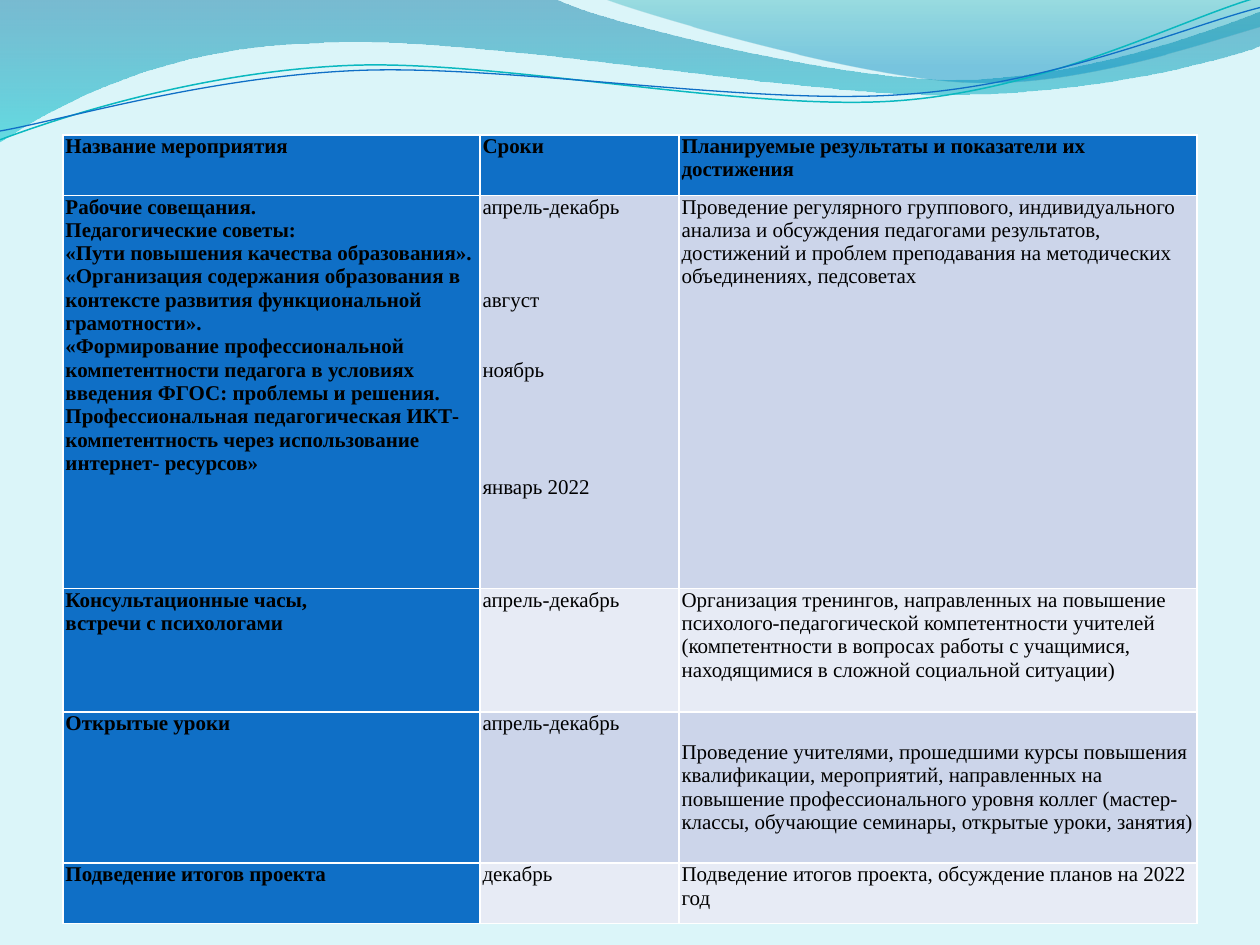
from dataclasses import dataclass

from lxml.etree import SubElement
from pptx import Presentation
from pptx.dml.color import RGBColor
from pptx.enum.text import MSO_ANCHOR, PP_ALIGN
from pptx.oxml.ns import qn
from pptx.util import Inches, Pt


@dataclass(frozen=True)
class Theme:
    font: str = "Times New Roman"
    text_size: float = 12
    blank_line: float = 13.35
    background: str = "DBF5F9"
    text: str = "000000"
    accent: str = "0F6FC6"
    teal: str = "0AB8BF"
    band_dark: str = "CCD5EA"
    band_light: str = "E7EBF5"
    wide_wave: tuple = ((0, "0074A1", 45), (1, "00C6CF", 55))
    right_wave: tuple = ((0, "00A1A9", 30), (0.8, "008BBF", 45))


THEME = Theme()

WIDE_WAVE = [
    (0, 0), (4.4, -0.01),
    (4.76, 0.17, 6.64, 0.63, 7.58, 0.63), (8.53, 0.63, 9.58, 0.26, 10, 0.09),
    (10.01, 0.36),
    (9.83, 0.44, 8.7, 0.76, 7.46, 0.75), (6.22, 0.75, 3.82, 0.28, 2.57, 0.34),
    (1.29, 0.36, 0.46, 0.83, -0.01, 1.13),
]
RIGHT_WAVE = [
    (4.79, -0.01), (5.09, 0.11, 6.82, 0.62, 7.69, 0.65),
    (8.56, 0.69, 9.61, 0.32, 10, 0.21), (10, 0),
]
TEAL_LINE = [
    (0, 1.11), (0.48, 0.93, 1.58, 0.57, 2.77, 0.52),
    (3.95, 0.47, 5.93, 0.89, 7.13, 0.8), (8.33, 0.71, 9.38, 0.15, 9.98, -0.02),
]
BLUE_LINE = [
    (0, 1.04), (0.47, 0.96, 1.64, 0.61, 2.83, 0.56),
    (4.03, 0.51, 5.97, 0.84, 7.17, 0.75), (8.36, 0.67, 9.41, 0.21, 10, 0.06),
]

COLUMN_WIDTHS = [3.31, 1.58, 4.11]
ROW_HEIGHTS = [0.48, 3.12, 0.98, 1.2, 0.48]
ROWS = [
    [
        ["Название мероприятия"],
        ["Сроки"],
        ["Планируемые результаты и показатели их достижения"],
    ],
    [
        [
            "Рабочие совещания.",
            "Педагогические советы:",
            "«Пути повышения качества образования».",
            "«Организация содержания образования в контексте развития "
            "функциональной грамотности».",
            "«Формирование профессиональной компетентности педагога в условиях "
            "введения ФГОС: проблемы и решения. Профессиональная педагогическая "
            "ИКТ- компетентность через использование интернет- ресурсов»",
        ],
        ["апрель-декабрь", "август", "ноябрь", "январь 2022"],
        [
            "Проведение регулярного группового, индивидуального анализа и "
            "обсуждения педагогами результатов, достижений и проблем "
            "преподавания на методических объединениях, педсоветах"
        ],
    ],
    [
        ["Консультационные часы,", "встречи с психологами"],
        ["апрель-декабрь"],
        [
            "Организация тренингов, направленных на повышение "
            "психолого-педагогической компетентности учителей (компетентности "
            "в вопросах работы с учащимися, находящимися в сложной социальной "
            "ситуации)"
        ],
    ],
    [
        ["Открытые уроки"],
        ["апрель-декабрь"],
        [
            "Проведение учителями, прошедшими курсы повышения квалификации, "
            "мероприятий, направленных на повышение профессионального уровня "
            "коллег (мастер-классы, обучающие семинары, открытые уроки, занятия)"
        ],
    ],
    [
        ["Подведение итогов проекта"],
        ["декабрь"],
        ["Подведение итогов проекта, обсуждение планов на 2022 год"],
    ],
]
MONTH_GAPS = [0, 3, 2, 4]


def color(value):
    return RGBColor.from_string(value)


def bend_segments(shape, outline, points):
    origin_x = min(x for x, _ in points)
    origin_y = min(y for _, y in points)
    lines = list(shape.element.spPr.iter(qn("a:lnTo")))
    for line, segment in zip(lines, outline[1:]):
        if len(segment) == 2:
            continue
        line.tag = qn("a:cubicBezTo")
        line.remove(line[0])
        for x, y in zip(segment[::2], segment[1::2]):
            SubElement(line, qn("a:pt"), x=str(Inches(x) - origin_x), y=str(Inches(y) - origin_y))


def add_outline(slide, left, top, outline, close):
    points = [(Inches(segment[-2]), Inches(segment[-1])) for segment in outline]
    builder = slide.shapes.build_freeform(*points[0])
    builder.add_line_segments(points[1:], close=close)
    shape = builder.convert_to_shape(left, top)
    bend_segments(shape, outline, points)
    shape.shadow.inherit = False
    return shape


def add_wave(slide, left, top, outline, stops):
    shape = add_outline(slide, left, top, outline, True)
    shape.line.fill.background()
    shape.fill.gradient()
    shape.fill.gradient_angle = 270
    for stop, (position, value, _) in zip(shape.fill.gradient_stops, stops):
        stop.position = position
        stop.color.rgb = color(value)
    for element, (_, _, opacity) in zip(shape.element.spPr.iter(qn("a:srgbClr")), stops):
        SubElement(element, qn("a:alpha"), val=str(opacity * 1000))


def add_wave_line(slide, left, top, outline, value, width):
    shape = add_outline(slide, left, top, outline, False)
    shape.fill.background()
    shape.line.color.rgb = color(value)
    shape.line.width = Pt(width)


def add_wave_header(slide, left, top):
    add_wave(slide, left, top, WIDE_WAVE, THEME.wide_wave)
    add_wave(slide, left, top, RIGHT_WAVE, THEME.right_wave)
    add_wave_line(slide, left, top, TEAL_LINE, THEME.teal, 0.85)
    add_wave_line(slide, left, top, BLUE_LINE, THEME.accent, 0.75)


def fill_cell(cell, texts, row_index, column_index):
    is_heading = row_index == 0 or column_index == 0
    band = THEME.band_dark if row_index % 2 else THEME.band_light
    cell.fill.solid()
    cell.fill.fore_color.rgb = color(THEME.accent if is_heading else band)
    cell.margin_left = cell.margin_right = Inches(0.02)
    cell.margin_top = cell.margin_bottom = 0
    if (row_index, column_index) == (3, 2):
        cell.vertical_anchor = MSO_ANCHOR.MIDDLE
    gaps = MONTH_GAPS if column_index == 1 else [0] * len(texts)
    for index, (text, gap) in enumerate(zip(texts, gaps)):
        paragraph = cell.text_frame.paragraphs[0] if index == 0 else cell.text_frame.add_paragraph()
        paragraph.text = text
        paragraph.alignment = PP_ALIGN.LEFT
        if gap:
            paragraph.space_before = Pt(gap * THEME.blank_line)
        paragraph.font.name = THEME.font
        paragraph.font.size = Pt(THEME.text_size)
        paragraph.font.bold = is_heading
        paragraph.font.color.rgb = color(THEME.text)


def add_plan_table(slide, left, top, width, height):
    table = slide.shapes.add_table(len(ROWS), len(COLUMN_WIDTHS), left, top, width, height).table
    for column, share in zip(table.columns, COLUMN_WIDTHS):
        column.width = int(width * share / sum(COLUMN_WIDTHS))
    for row, share in zip(table.rows, ROW_HEIGHTS):
        row.height = int(height * share / sum(ROW_HEIGHTS))
    for row_index, row in enumerate(ROWS):
        for column_index, texts in enumerate(row):
            fill_cell(table.cell(row_index, column_index), texts, row_index, column_index)


def main():
    presentation = Presentation()
    presentation.slide_width, presentation.slide_height = Inches(10), Inches(7.5)
    slide = presentation.slides.add_slide(presentation.slide_layouts[6])
    slide.background.fill.solid()
    slide.background.fill.fore_color.rgb = color(THEME.background)
    add_wave_header(slide, 0, 0)
    add_plan_table(slide, Inches(0.5), Inches(1.07), Inches(9), Inches(6.26))
    presentation.save("out.pptx")


if __name__ == "__main__":
    main()
